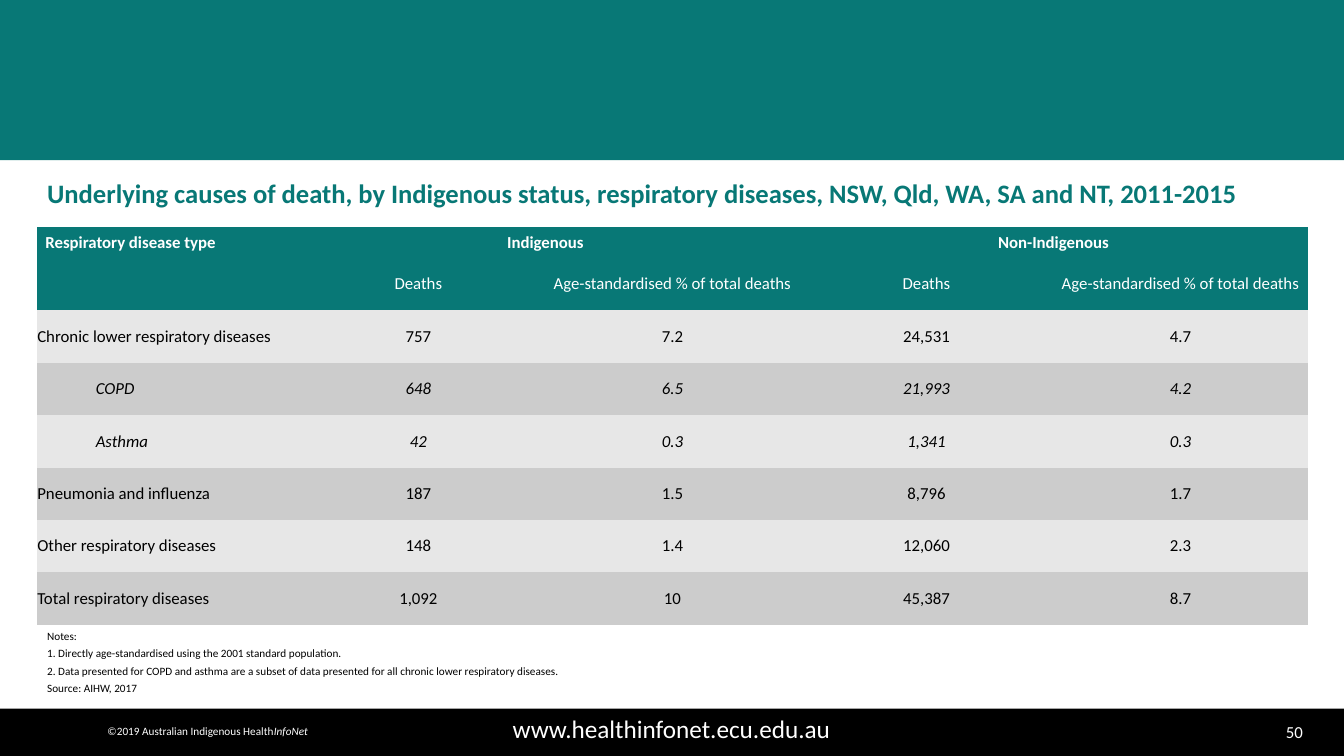
"""Build a slide with a table of deaths from respiratory diseases."""
from pptx import Presentation
from pptx import util as u
from pptx.dml.color import RGBColor
from pptx.enum import shapes, text

COLORS = {"teal": "087876", "black": "000000", "white": "FFFFFF",
          "light": "E7E7E7", "dark": "CCCCCC"}
FONT = "Calibri"
W, H = 13.33, 7.5
LEFT = 0.37
LEFT_ALIGN, CENTER, RIGHT = text.PP_ALIGN.LEFT, text.PP_ALIGN.CENTER, text.PP_ALIGN.RIGHT
MIDDLE, TOP = text.MSO_ANCHOR.MIDDLE, text.MSO_ANCHOR.TOP

TITLE = ("Underlying causes of death, by Indigenous status, respiratory diseases, "
         "NSW, Qld, WA, SA and NT, 2011-2015")
HEADERS = [
    ("Respiratory disease type", "Indigenous", "", "Non-Indigenous", ""),
    ("",) + ("Deaths", "Age-standardised % of total deaths") * 2,
]
DISEASES = [
    ("Chronic lower respiratory diseases", "757", "7.2", "24,531", "4.7"),
    ("COPD", "648", "6.5", "21,993", "4.2"),
    ("Asthma", "42", "0.3", "1,341", "0.3"),
    ("Pneumonia and influenza", "187", "1.5", "8,796", "1.7"),
    ("Other respiratory diseases", "148", "1.4", "12,060", "2.3"),
    ("Total respiratory diseases", "1,092", "10", "45,387", "8.7"),
]
SUBTYPES = {"COPD", "Asthma"}
NOTES = [
    "Notes:",
    "1. Directly age-standardised using the 2001 standard population.",
    "2. Data presented for COPD and asthma are a subset of data presented "
    "for all chronic lower respiratory diseases.",
    "Source: AIHW, 2017",
]
BANDS = [(0, 1.59, "teal"), (7.03, 0.47, "black")]
NO_STYLE = "{2D5ABB26-0587-4C30-8999-92F81FD0307C}"
COL_W, HEAD_H, ROW_H = 2.52, 0.31, 0.52


def style(p, size, color, align=LEFT_ALIGN, bold=False, italic=False):
    p.alignment = align
    f = p.font
    f.name, f.size, f.bold, f.italic = FONT, u.Pt(size), bold, italic
    f.color.rgb = RGBColor.from_string(COLORS[color])


def add_text(s, box, lines, size, color, align=LEFT_ALIGN, bold=False,
             anchor=TOP, wrap=True):
    tf = s.shapes.add_textbox(*map(u.Inches, box)).text_frame
    tf.word_wrap, tf.vertical_anchor = wrap, anchor
    tf.text = "\n".join(lines)
    for p in tf.paragraphs:
        style(p, size, color, align, bold)
    return tf


def add_bands(s):
    for top, height, color in BANDS:
        sp = s.shapes.add_shape(shapes.MSO_SHAPE.RECTANGLE, 0, u.Inches(top),
                                u.Inches(W), u.Inches(height))
        sp.shadow.inherit = False
        sp.fill.solid()
        sp.fill.fore_color.rgb = RGBColor.from_string(COLORS[color])
        sp.line.fill.background()


def add_deaths_table(s):
    rows = HEADERS + DISEASES
    n_cols = len(rows[0])
    heights = [HEAD_H] + [ROW_H] * (len(rows) - 1)
    frame = s.shapes.add_table(len(rows), n_cols, u.Inches(LEFT), u.Inches(2.25),
                               u.Inches(COL_W * n_cols), u.Inches(sum(heights)))
    table = frame.table
    table._tbl.tblPr[0].text = NO_STYLE
    for col in table.columns:
        col.width = u.Inches(COL_W)
    for r, values in enumerate(rows):
        table.rows[r].height = u.Inches(heights[r])
        header = r < len(HEADERS)
        fill = "teal" if header else ("light", "dark")[r % 2]
        subtype = values[0] in SUBTYPES
        for c, value in enumerate(values):
            cell = table.cell(r, c)
            cell.fill.solid()
            cell.fill.fore_color.rgb = RGBColor.from_string(COLORS[fill])
            cell.vertical_anchor = MIDDLE
            label = c == 0 and not header
            side, edge = (0, 0) if label else (0.08, 0.03)
            cell.margin_left = u.Inches(0.58 if label and subtype else side)
            cell.margin_right = u.Inches(side)
            cell.margin_top = cell.margin_bottom = u.Inches(edge)
            cell.text = value
            style(cell.text_frame.paragraphs[0], 12, "white" if header else "black",
                  CENTER if c else LEFT_ALIGN, r == 0, subtype)
    for c in (1, 3):
        table.cell(0, c).merge(table.cell(0, c + 1))


def main():
    prs = Presentation()
    prs.slide_width, prs.slide_height = u.Inches(W), u.Inches(H)
    s = prs.slides.add_slide(prs.slide_layouts[6])
    add_bands(s)
    add_text(s, (11.95, 7.11, 1.07, 0.3), ["50"], 12, "white", RIGHT, anchor=MIDDLE)
    add_text(s, (0.62, 7.03, 12.08, 0.39), ["www.healthinfonet.ecu.edu.au"], 18,
             "white", CENTER)
    tf = add_text(s, (0.95, 7.14, 2.22, 0.24), ["©2019 Australian Indigenous Health"],
                  8, "white", CENTER, wrap=False)
    r = tf.paragraphs[0].add_run()
    r.text, r.font.italic = "InfoNet", True
    tf = add_text(s, (LEFT, 1.62, 12.3, 0.63), [TITLE], 19, "teal", bold=True,
                  anchor=MIDDLE)
    tf.paragraphs[0].line_spacing = 0.9
    add_deaths_table(s)
    tf = add_text(s, (LEFT, 6.19, 6.67, 0.77), NOTES, 8, "black")
    for p in tf.paragraphs[:-1]:
        p.space_after = u.Pt(3)
    prs.save("out.pptx")


if __name__ == "__main__":
    main()
